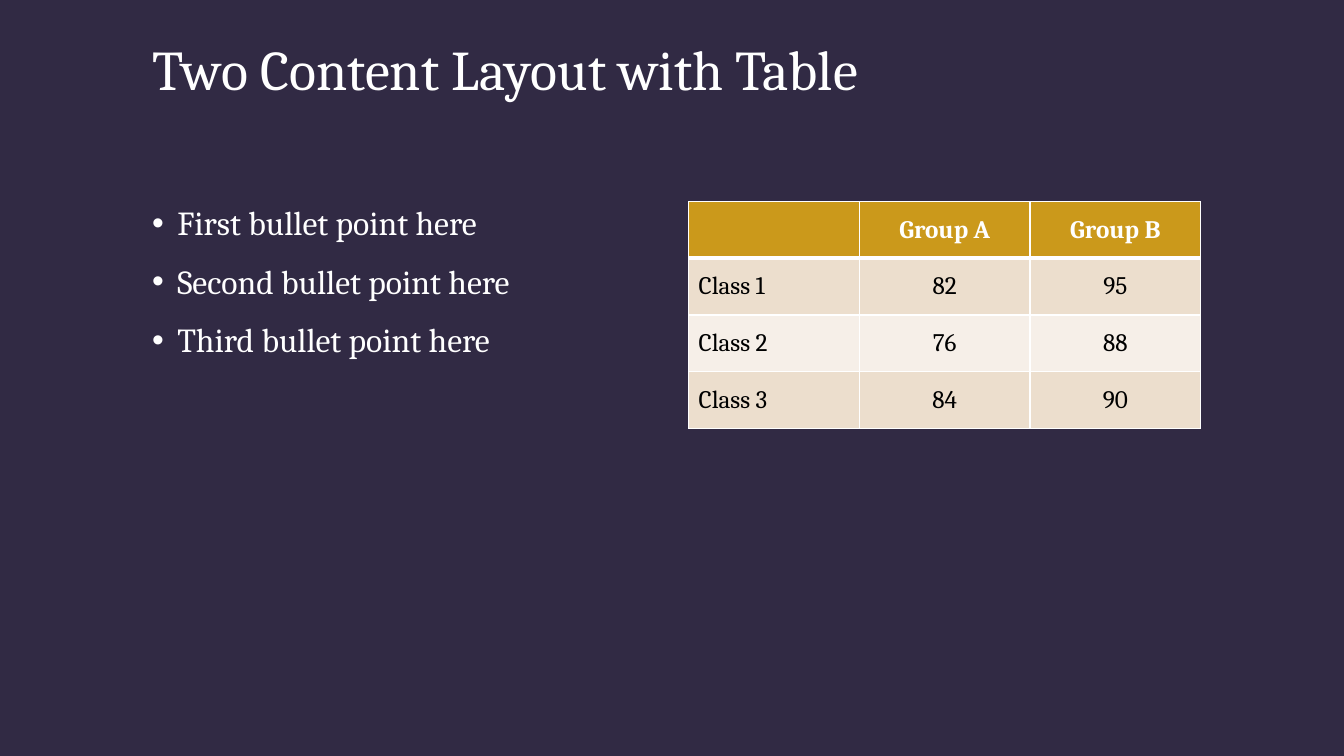
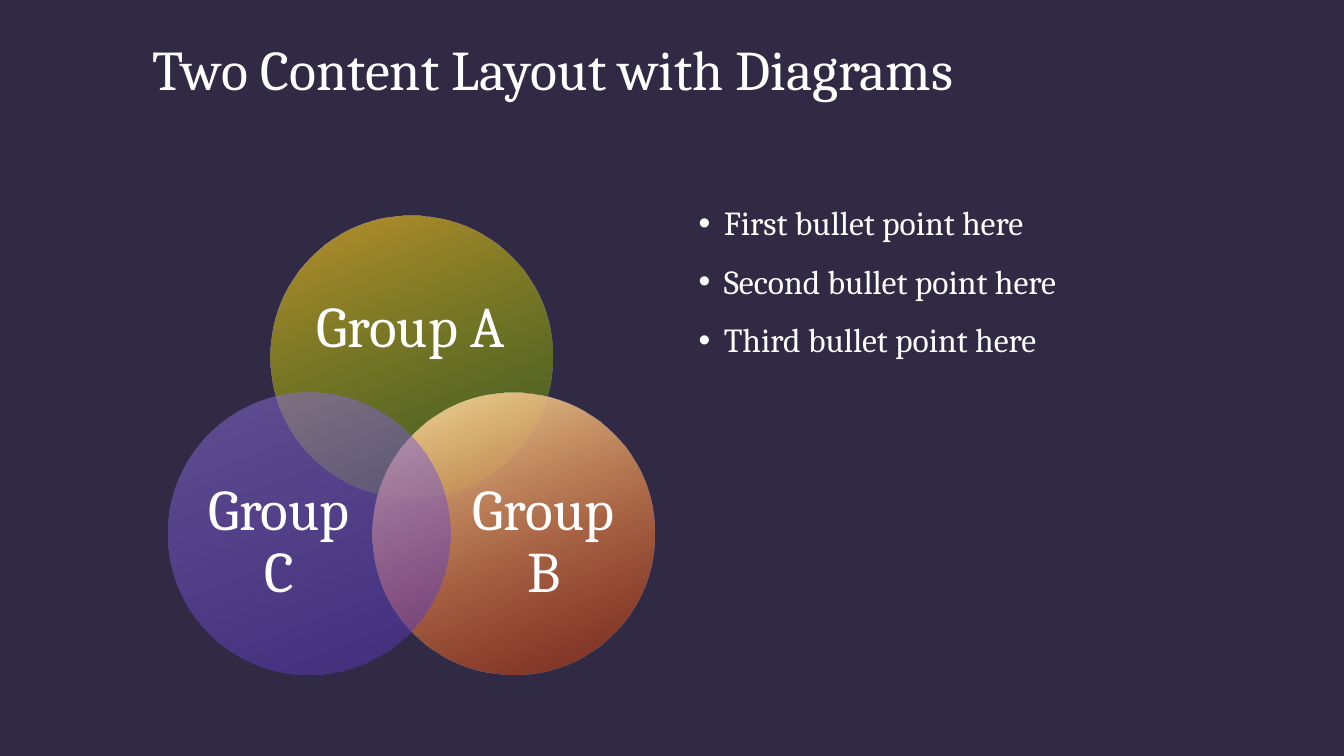
from math import cos, radians, sin

from lxml import etree
from pptx import Presentation
from pptx.dml.color import RGBColor
from pptx.enum.shapes import MSO_SHAPE
from pptx.enum.text import MSO_ANCHOR, PP_ALIGN
from pptx.oxml.ns import qn
from pptx.util import Inches, Pt

OVAL = MSO_SHAPE.OVAL
TOP, MIDDLE = MSO_ANCHOR.TOP, MSO_ANCHOR.MIDDLE
LEFT, CENTER = PP_ALIGN.LEFT, PP_ALIGN.CENTER

NIGHT = RGBColor(0x31, 0x2A, 0x44)
WHITE = RGBColor(0xFF, 0xFF, 0xFF)
BLACK = RGBColor(0x00, 0x00, 0x00)
GOLD = RGBColor(0xCB, 0x99, 0x1B)
SAND = RGBColor(0xEC, 0xDE, 0xCD)
CREAM = RGBColor(0xF6, 0xEF, 0xE8)
OCHRE = RGBColor(0xBC, 0x91, 0x2E)
GREEN = RGBColor(0x4E, 0x88, 0x08)
STRAW = RGBColor(0xF2, 0xDA, 0x9C)
RUST = RGBColor(0xC2, 0x30, 0x02)
LILAC = RGBColor(0x8F, 0x73, 0xDF)
PURPLE = RGBColor(0x53, 0x31, 0xB6)

FONT = "Cambria"

# Boxes are left, top, width, height in inches
TITLE_BOX = (1.41, 0.42, 10.5, 1.25)
LEFT_BOX = (1.41, 2, 5.08, 4.75)
RIGHT_BOX = (6.83, 2, 5.08, 4.75)
TABLE_BOX = (6.83, 2, 5.08, 2.25)

POINTS = ["First bullet point here", "Second bullet point here",
          "Third bullet point here"]
SCORES = [["", "Group A", "Group B"],
          ["Class 1", "82", "95"],
          ["Class 2", "76", "88"],
          ["Class 3", "84", "90"]]

# Label, angle on the ring, (colour, opacity) stops, label box inside the circle
CIRCLES = [
    ("Group A", -90, [(OCHRE, 100), (GREEN, 50)], (0.37, 0.49, 2.05, 1.26)),
    ("Group B", 30, [(STRAW, 100), (RUST, 50)], (0.86, 0.72, 1.68, 1.54)),
    ("Group C", 150, [(LILAC, 50), (PURPLE, 50)], (0.26, 0.72, 1.68, 1.54)),
]


def style(font, size, color=WHITE, bold=False):
    look = {"name": FONT, "size": Pt(size), "bold": bold}
    for key, value in look.items():
        setattr(font, key, value)
    font.color.rgb = color


def add_text(slide, box, lines, size, spacing=0.9, align=LEFT, anchor=TOP,
             inset=None, bullet=False):
    frame = slide.shapes.add_textbox(*map(Inches, box)).text_frame
    frame.word_wrap = True
    frame.vertical_anchor = anchor
    if inset is not None:
        for side in ("left", "top", "right", "bottom"):
            setattr(frame, "margin_" + side, Inches(inset))
    for i, line in enumerate(lines):
        para = frame.add_paragraph() if i else frame.paragraphs[0]
        para.text = line
        para.alignment = align
        para.line_spacing = spacing
        if bullet:
            if i:
                para.space_before = Pt(16)
            add_bullet(para)
        style(para.font, size)


def add_bullet(para):
    props = para._p.get_or_add_pPr()
    props.set("marL", str(Inches(0.25)))
    props.set("indent", str(-Inches(0.25)))
    etree.SubElement(props, qn("a:buFont"), typeface="Arial")
    etree.SubElement(props, qn("a:buChar"), char="•")


def add_points(slide, box):
    add_text(slide, box, POINTS, 24, bullet=True)


def add_edges(cell, widths):
    """Draw white borders; widths maps lnL, lnR, lnT, lnB to points."""
    props = cell._tc.get_or_add_tcPr()
    for i, (tag, width) in enumerate(widths.items()):
        line = etree.Element(qn("a:" + tag), w=str(Pt(width)))
        fill = etree.SubElement(line, qn("a:solidFill"))
        etree.SubElement(fill, qn("a:srgbClr"), val=str(WHITE))
        props.insert(i, line)


def add_scores(slide, box):
    rows, cols = len(SCORES), len(SCORES[0])
    table = slide.shapes.add_table(rows, cols, *map(Inches, box)).table
    for col in table.columns:
        col.width = Inches(box[2] / cols)
    for r, row in enumerate(SCORES):
        table.rows[r].height = Inches(box[3] / rows)
        head = r == 0
        for c, text in enumerate(row):
            cell = table.cell(r, c)
            cell.text = text
            cell.vertical_anchor = MIDDLE
            cell.fill.solid()
            cell.fill.fore_color.rgb = GOLD if head else (CREAM, SAND)[r % 2]
            para = cell.text_frame.paragraphs[0]
            para.alignment = CENTER if c else LEFT
            style(para.font, 18, WHITE if head else BLACK, head)
            add_edges(cell, {"lnL": 1, "lnR": 1, "lnT": 3 if r == 1 else 1,
                             "lnB": 3 if head else 1})


def fade(shape, stops):
    """Fill with a gradient of (colour, opacity) stops."""
    shape.fill.gradient()
    shape.fill.gradient_angle = 291
    for stop, (color, _) in zip(shape.fill.gradient_stops, stops):
        stop.color.rgb = color
    marks = shape._element.spPr.iter(qn("a:srgbClr"))
    for mark, (_, part) in zip(list(marks), stops):
        etree.SubElement(mark, qn("a:alpha"), val=str(part * 1000))


def add_venn(slide, box):
    size, ring = 2.8, 1.17
    mid_x, mid_y = box[0] + 2.67, box[1] + 2.71
    for label, angle, stops, (dx, dy, wide, high) in CIRCLES:
        x = mid_x + ring * cos(radians(angle)) - size / 2
        y = mid_y + ring * sin(radians(angle)) - size / 2
        disc = slide.shapes.add_shape(OVAL, *map(Inches, (x, y, size, size)))
        disc.shadow.inherit = False
        disc.line.fill.background()
        fade(disc, stops)
        add_text(slide, (x + dx, y + dy, wide, high), [label], 41,
                 align=CENTER, anchor=MIDDLE, inset=0)


def add_slide(deck, title, *parts):
    """Add a titled slide; parts are (function, box) pairs."""
    slide = deck.slides.add_slide(deck.slide_layouts[6])
    add_text(slide, TITLE_BOX, [title], 40, spacing=0.8)
    for draw, box in parts:
        draw(slide, box)


def main():
    deck = Presentation()
    deck.slide_width, deck.slide_height = Inches(13.33), Inches(7.5)
    back = deck.slide_master.background.fill
    back.solid()
    back.fore_color.rgb = NIGHT
    add_slide(deck, "Two Content Layout with Table",
              (add_points, LEFT_BOX), (add_scores, TABLE_BOX))
    add_slide(deck, "Two Content Layout with Diagrams",
              (add_venn, LEFT_BOX), (add_points, RIGHT_BOX))
    deck.save("out.pptx")


if __name__ == "__main__":
    main()
